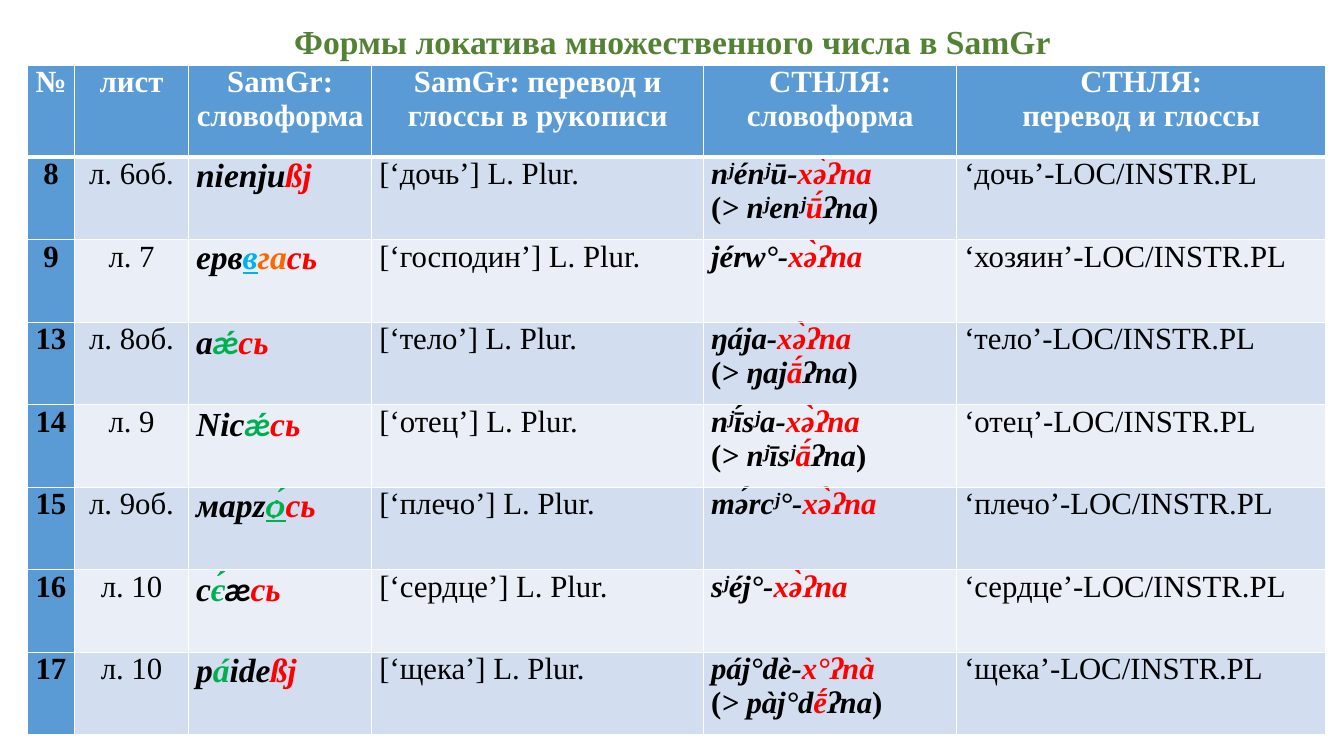
from dataclasses import dataclass
from typing import NamedTuple, Optional

from lxml import etree
from pptx import Presentation
from pptx.dml.color import RGBColor
from pptx.enum.text import MSO_ANCHOR, PP_ALIGN
from pptx.oxml.ns import qn
from pptx.util import Cm, Pt

LEFT, CENTER = PP_ALIGN.LEFT, PP_ALIGN.CENTER
MIDDLE = MSO_ANCHOR.MIDDLE


@dataclass(frozen=True)
class Theme:
    font: str = "Times New Roman"
    ligature_font: str = "Calibri"
    title_size: int = 24
    form_size: int = 24
    body_size: int = 22
    title: str = "548235"
    ink: str = "000000"
    white: str = "FFFFFF"
    accent: str = "5B9BD5"
    odd_band: str = "D2DEEF"
    even_band: str = "EAEFF7"
    red: str = "FF0000"
    green: str = "00B050"
    blue: str = "00B0F0"
    orange: str = "FF6600"


THEME = Theme()


class Span(NamedTuple):
    text: str
    color: str = THEME.ink
    size: int = THEME.body_size
    bold: bool = False
    italic: bool = False
    underline: bool = False
    font: str = THEME.font


def form(text: str, color: str = THEME.ink, underline: bool = False,
         font: str = THEME.font) -> Span:
    """Part of a manuscript word form."""
    return Span(text, color, THEME.form_size, True, True, underline, font)


def reflex(text: str, color: str = THEME.ink) -> Span:
    """Part of a dictionary word form."""
    return Span(text, color, bold=True, italic=True)


class Contraction(NamedTuple):
    stem: str
    vowel: str


@dataclass(frozen=True)
class Entry:
    number: int
    leaf: str
    manuscript: list[Span]
    meaning: str
    stem: str
    suffix: str = "xə̀ʔna"
    contraction: Optional[Contraction] = None

    def dictionary_lines(self) -> list[list[Span]]:
        lines = [[reflex(self.stem + "-"), reflex(self.suffix, THEME.red)]]
        if self.contraction:
            lines.append([
                Span("(", bold=True),
                reflex("> " + self.contraction.stem),
                reflex(self.contraction.vowel, THEME.red),
                reflex("ʔna"),
                Span(")", bold=True),
            ])
        return lines


TITLE = "Формы локатива множественного числа в SamGr"
HEADERS = [
    ["№"],
    ["лист"],
    ["SamGr:", "cловоформа"],
    ["SamGr: перевод и глоссы в рукописи"],
    ["СТНЛЯ:", "cловоформа"],
    ["СТНЛЯ:", "перевод и глоссы"],
]
LOCATIVE = form("сь", THEME.red)
LATIN_LOCATIVE = form("ßj", THEME.red)
ACUTE_LIGATURE = form("ǽ", THEME.green, font=THEME.ligature_font)

ENTRIES = [
    Entry(8, "6об.", [form("nienju"), LATIN_LOCATIVE], "дочь", "nʲénʲū",
          contraction=Contraction("nʲenʲ", "ū́")),
    Entry(9, "7", [form("ерв"), form("в", THEME.blue, underline=True),
                   form("га", THEME.orange), LOCATIVE], "господин", "jérw°"),
    Entry(13, "8об.", [form("а"), ACUTE_LIGATURE, LOCATIVE], "тело", "ŋája",
          contraction=Contraction("ŋaj", "ā́")),
    Entry(14, "9", [form("Nic"), ACUTE_LIGATURE, LOCATIVE], "отец", "nʲī́sʲa",
          contraction=Contraction("nʲīsʲ", "ā́")),
    Entry(15, "9об.", [form("марz"), form("ѻ́", THEME.green, underline=True),
                       LOCATIVE], "плечо", "mə́rcʲ°"),
    Entry(16, "10", [form("c"), form("є́", THEME.green),
                     form("æ", font=THEME.ligature_font), LOCATIVE],
          "сердце", "sʲéj°"),
    Entry(17, "10", [form("p"), form("á", THEME.green), form("ide"),
                     LATIN_LOCATIVE], "щека", "páj°dè", "x°ʔnà",
          Contraction("pàj°d", "ḗ")),
]
# The dictionary translates one word differently from the manuscript
DICTIONARY_MEANINGS = {"господин": "хозяин"}

COLUMN_WIDTHS = [1.19, 2.87, 4.62, 8.36, 6.38, 9.3]
HEADER_HEIGHT, ENTRY_HEIGHT = 2.31, 2.08


def write_lines(frame, lines: list[list[Span]], align) -> None:
    for index, spans in enumerate(lines):
        paragraph = frame.paragraphs[0] if index == 0 else frame.add_paragraph()
        paragraph.alignment = align
        for span in spans:
            run = paragraph.add_run()
            run.text = span.text
            font = run.font
            font.name, font.size = span.font, Pt(span.size)
            font.bold, font.italic = span.bold, span.italic
            font.underline = span.underline
            font.color.rgb = RGBColor.from_string(span.color)


def set_borders(cell, bottom: float) -> None:
    properties = cell._tc.get_or_add_tcPr()
    for side, width in (("L", 1), ("R", 1), ("T", 1), ("B", bottom)):
        line = etree.SubElement(properties, qn(f"a:ln{side}"), w=str(Pt(width)))
        fill = etree.SubElement(line, qn("a:solidFill"))
        etree.SubElement(fill, qn("a:srgbClr"), val=THEME.white)


def fill_cell(cell, lines: list[list[Span]], align, color: str,
              bottom: float = 1) -> None:
    cell.margin_left = cell.margin_right = Cm(0.19)
    cell.margin_top = cell.margin_bottom = Cm(0)
    set_borders(cell, bottom)
    cell.fill.solid()
    cell.fill.fore_color.rgb = RGBColor.from_string(color)
    write_lines(cell.text_frame, lines, align)


def add_forms_table(slide) -> None:
    table = slide.shapes.add_table(
        len(ENTRIES) + 1, len(HEADERS), Cm(0.69), Cm(1.65),
        Cm(sum(COLUMN_WIDTHS)),
        Cm(HEADER_HEIGHT + ENTRY_HEIGHT * len(ENTRIES))).table
    table.first_row = table.horz_banding = False
    for column, width in zip(table.columns, COLUMN_WIDTHS):
        column.width = Cm(width)
    for index, row in enumerate(table.rows):
        row.height = Cm(ENTRY_HEIGHT if index else HEADER_HEIGHT)

    # Header row
    for index, header in enumerate(HEADERS):
        lines = [[Span(text, THEME.white, bold=True)] for text in header]
        fill_cell(table.cell(0, index), lines, CENTER, THEME.accent, 3)

    # One row per word
    for row, entry in enumerate(ENTRIES, start=1):
        band = THEME.odd_band if row % 2 else THEME.even_band
        translation = DICTIONARY_MEANINGS.get(entry.meaning, entry.meaning)
        contents = [
            ([[Span(str(entry.number), bold=True)]], CENTER, THEME.accent),
            ([[Span(f"л. {entry.leaf}")]], CENTER, band),
            ([entry.manuscript], LEFT, band),
            ([[Span(f"[‘{entry.meaning}’] L. Plur.")]], LEFT, band),
            (entry.dictionary_lines(), LEFT, band),
            ([[Span(f"‘{translation}’-LOC/INSTR.PL")]], LEFT, band),
        ]
        for column, (lines, align, color) in enumerate(contents):
            fill_cell(table.cell(row, column), lines, align, color)


def add_title(slide) -> None:
    frame = slide.shapes.add_textbox(Cm(2.34), Cm(0.56), Cm(29.21), Cm(1.09)).text_frame
    frame.word_wrap = True
    frame.vertical_anchor = MIDDLE
    write_lines(frame, [[Span(TITLE, THEME.title, THEME.title_size, True)]], CENTER)
    frame.paragraphs[0].line_spacing = 0.9


def main() -> None:
    presentation = Presentation()
    presentation.slide_width, presentation.slide_height = Cm(33.87), Cm(19.05)
    slide = presentation.slides.add_slide(presentation.slide_layouts[6])
    add_forms_table(slide)
    add_title(slide)
    presentation.save("out.pptx")


if __name__ == "__main__":
    main()
